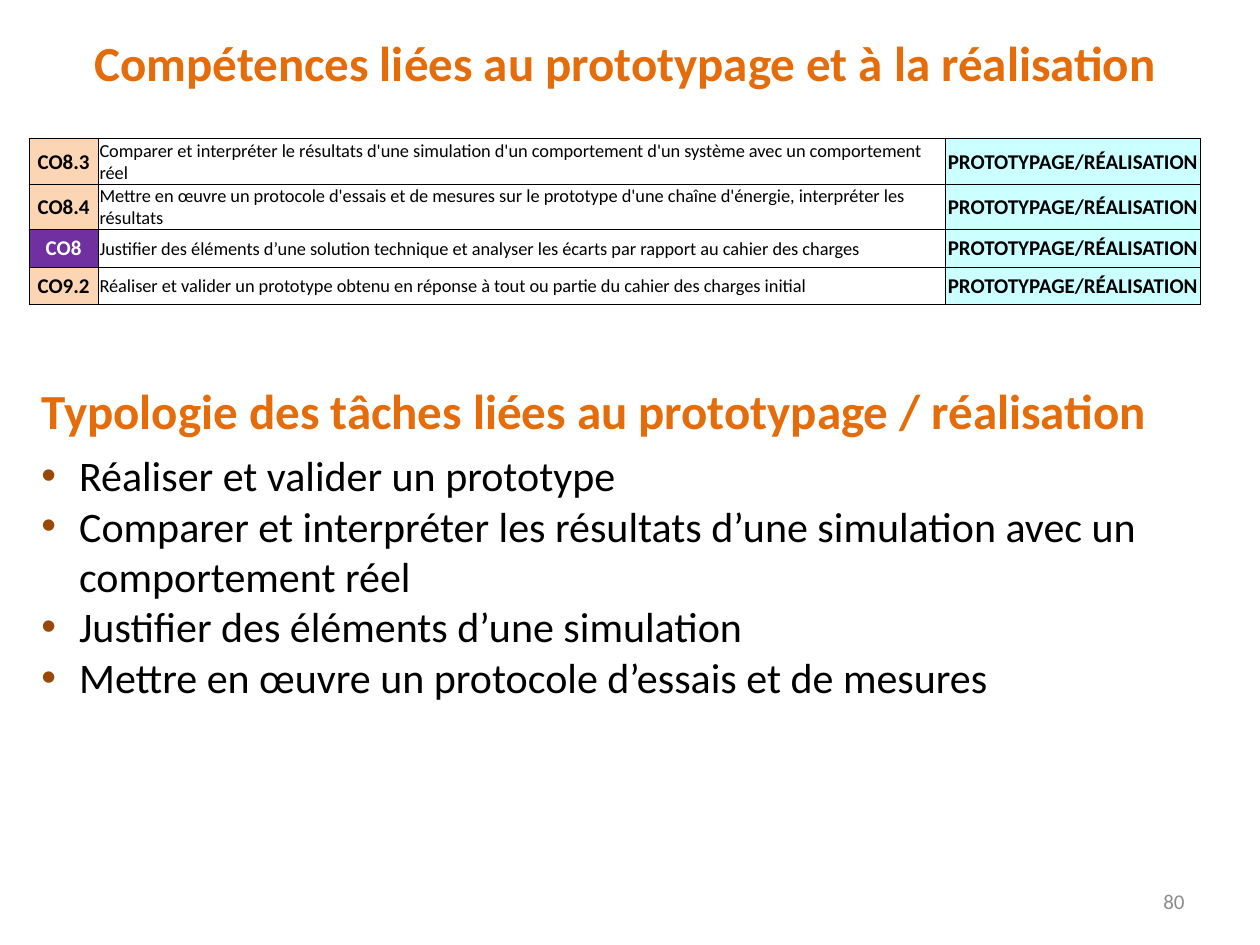
from lxml.etree import SubElement
from pptx import Presentation
from pptx.dml.color import RGBColor
from pptx.enum.shapes import MSO_SHAPE
from pptx.enum.text import MSO_ANCHOR, PP_ALIGN
from pptx.oxml.ns import qn
from pptx.util import Inches, Pt

BLACK = RGBColor(0x00, 0x00, 0x00)
WHITE = RGBColor(0xFF, 0xFF, 0xFF)
GREY = RGBColor(0x8C, 0x8C, 0x8C)
ORANGE = RGBColor(0xE4, 0x6C, 0x0A)
BROWN = RGBColor(0x98, 0x48, 0x07)
PEACH = RGBColor(0xFC, 0xD5, 0xB5)
PURPLE = RGBColor(0x70, 0x30, 0xA0)
CYAN = RGBColor(0xCC, 0xFF, 0xFF)

TAG = "PROTOTYPAGE/RÉALISATION"
SKILLS = [
    ("CO8.3", "Comparer et interpréter le résultats d'une simulation d'un comportement d'un système avec un comportement réel"),
    ("CO8.4", "Mettre en œuvre un protocole d'essais et de mesures sur le prototype d'une chaîne d'énergie, interpréter les résultats"),
    ("CO8", "Justifier des éléments d’une solution technique et analyser les écarts par rapport au cahier des charges"),
    ("CO9.2", "Réaliser et valider un prototype obtenu en réponse à tout ou partie du cahier des charges initial"),
]
TASKS = [
    "Réaliser et valider un prototype",
    "Comparer et interpréter les résultats d’une simulation avec un comportement réel",
    "Justifier des éléments d’une simulation",
    "Mettre en œuvre un protocole d’essais et de mesures",
]


class Sheet:
    """Draws styled elements on a slide gridded in 100 columns and 75 rows."""

    font = "Calibri"
    unit = Inches(0.1)

    def __init__(self, deck):
        self.slide = deck.slides.add_slide(deck.slide_layouts[6])

    def size(self, *cells):
        return [round(n * self.unit) for n in cells]

    def style(self, para, size, color=BLACK, bold=False, align=PP_ALIGN.LEFT):
        para.alignment = align
        for run in para.runs:
            run.font.name = self.font
            run.font.size = Pt(size)
            run.font.bold = bold
            run.font.color.rgb = color

    def indent(self, para, mark=None):
        props = para._p.get_or_add_pPr()
        props.set("marL", str(Inches(0.3)))
        props.set("indent", str(-Inches(0.3)))
        if mark:
            tint = SubElement(props, qn("a:buClr"))
            SubElement(tint, qn("a:srgbClr"), val=str(BROWN))
            SubElement(props, qn("a:buFont"), typeface="Arial")
            SubElement(props, qn("a:buChar"), char=mark)

    def panel(self, at, head, align=PP_ALIGN.LEFT, items=()):
        box = self.slide.shapes.add_shape(MSO_SHAPE.RECTANGLE, *self.size(*at))
        box.shadow.inherit = False
        box.fill.solid()
        box.fill.fore_color.rgb = WHITE
        box.line.fill.background()
        frame = box.text_frame
        frame.word_wrap = True
        frame.vertical_anchor = MSO_ANCHOR.TOP
        frame.text = head
        title = frame.paragraphs[0]
        title.space_after = Pt(6)
        self.style(title, 28, ORANGE, True, align)
        self.indent(title)
        for item in items:
            para = frame.add_paragraph()
            para.text = item
            self.style(para, 24)
            self.indent(para, "•")

    def border(self, cell):
        props = cell._tc.get_or_add_tcPr()
        for side in ("lnL", "lnR", "lnT", "lnB"):
            line = SubElement(props, qn(f"a:{side}"), w=str(Pt(0.5)))
            paint = SubElement(line, qn("a:solidFill"))
            SubElement(paint, qn("a:srgbClr"), val=str(BLACK))

    def cell(self, cell, text, size, fill=None, color=BLACK):
        self.border(cell)
        cell.margin_left = cell.margin_right = cell.margin_top = Inches(0.01)
        cell.margin_bottom = 0
        cell.vertical_anchor = MSO_ANCHOR.MIDDLE
        cell.text = text
        para = cell.text_frame.paragraphs[0]
        if fill is None:
            cell.fill.background()
            self.style(para, size, color)
        else:
            cell.fill.solid()
            cell.fill.fore_color.rgb = fill
            self.style(para, size, color, True, PP_ALIGN.CENTER)

    def table(self, at, widths, skills):
        grid = self.slide.shapes.add_table(len(skills), len(widths), *self.size(*at)).table
        grid.first_row = grid.horz_banding = False
        for col, width in zip(grid.columns, self.size(*widths)):
            col.width = width
        for row, (code, text) in zip(grid.rows, skills):
            main = "." not in code
            code_cell, text_cell, tag_cell = row.cells
            self.cell(code_cell, code, 12, PURPLE if main else PEACH, WHITE if main else BLACK)
            self.cell(text_cell, text, 10.5)
            self.cell(tag_cell, TAG, 12, CYAN)

    def number(self, at, text):
        frame = self.slide.shapes.add_textbox(*self.size(*at)).text_frame
        frame.word_wrap = True
        frame.vertical_anchor = MSO_ANCHOR.MIDDLE
        frame.text = text
        self.style(frame.paragraphs[0], 12, GREY, align=PP_ALIGN.RIGHT)


def main():
    deck = Presentation()
    deck.slide_width, deck.slide_height = Inches(10), Inches(7.5)
    sheet = Sheet(deck)
    sheet.number((71.7, 69.5, 23.3, 4), "80")
    sheet.table((2.3, 11, 93, 12), (5.5, 67.2, 20.3), SKILLS)
    sheet.panel((3.1, 2.1, 93, 5.7), "Compétences liées au prototypage et à la réalisation", PP_ALIGN.CENTER)
    sheet.panel((2.3, 29.7, 93, 26.8), "Typologie des tâches liées au prototypage / réalisation", items=TASKS)
    deck.save("out.pptx")


if __name__ == "__main__":
    main()
